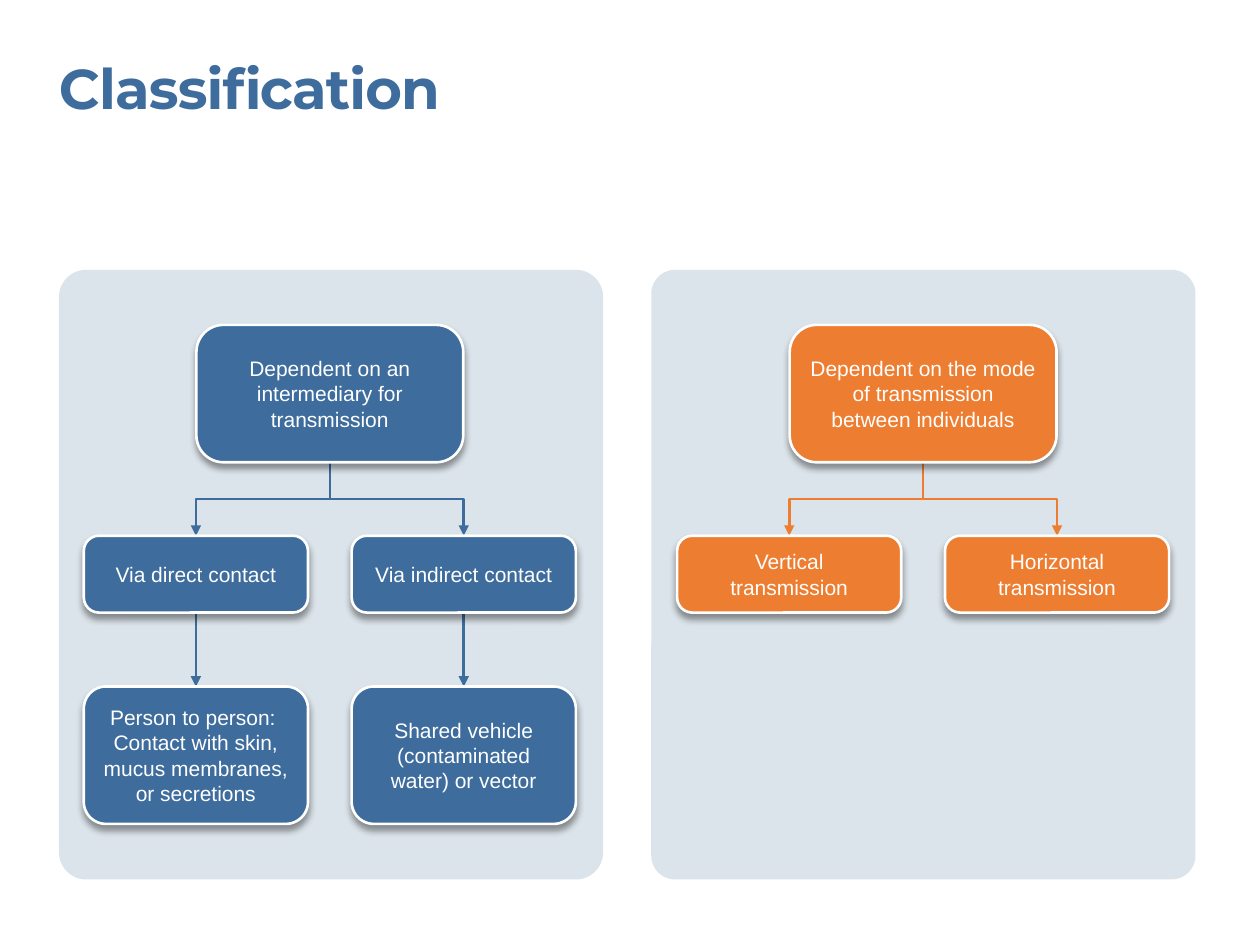
"""Build a slide that classifies transmission in two tree diagrams."""
from lxml import etree
from pptx import Presentation
from pptx import util as u
from pptx.dml.color import RGBColor
from pptx.enum import shapes, text
from pptx.oxml.ns import qn

BLUE = RGBColor(0x3D, 0x6C, 0x9D)
ORANGE = RGBColor(0xED, 0x7D, 0x30)
PALE = RGBColor(0xDB, 0xE4, 0xEA)
WHITE = RGBColor(0xFF, 0xFF, 0xFF)
ROUND = shapes.MSO_SHAPE.ROUNDED_RECTANGLE
KIND = shapes.MSO_CONNECTOR

deck = Presentation()
deck.slide_width, deck.slide_height = u.Cm(25.4), u.Cm(19.05)
slide = deck.slides.add_slide(deck.slide_layouts[6])
tree = slide.shapes


def add_box(mid, top, wide, high, adj, fill, lines):
    box = tree.add_shape(ROUND, u.Cm(mid - wide / 2), u.Cm(top), u.Cm(wide), u.Cm(high))
    box.adjustments[0] = adj
    box.fill.solid()
    box.fill.fore_color.rgb = fill
    box.line.color.rgb = WHITE
    box.line.width = u.Pt(1.5)
    box.shadow.inherit = False
    glow = etree.SubElement(
        box._element.spPr.find(qn("a:effectLst")), qn("a:outerShdw"),
        blurRad=str(u.Pt(4)), dist=str(u.Pt(3)), dir="5400000", rotWithShape="0")
    black = etree.SubElement(glow, qn("a:srgbClr"), val="000000")
    etree.SubElement(black, qn("a:alpha"), val="40000")
    frame = box.text_frame
    frame.word_wrap = True
    frame.vertical_anchor = text.MSO_ANCHOR.MIDDLE
    for i, words in enumerate(lines):
        para = frame.paragraphs[0] if i == 0 else frame.add_paragraph()
        para.alignment = text.PP_ALIGN.CENTER
        run = para.add_run()
        run.text = words
        run.font.name = "Arial"
        run.font.size = u.Pt(12)
        run.font.color.rgb = WHITE
    return box


def add_link(kind, start, end, color):
    link = tree.add_connector(kind, 0, 0, 0, 0)
    link.begin_connect(start, 2)
    link.end_connect(end, 0)
    link.line.color.rgb = color
    link.line.width = u.Pt(1.5)
    etree.SubElement(link.line._get_or_add_ln(), qn("a:tailEnd"), type="triangle")
    etree.SubElement(link._element.spPr, qn("a:effectLst"))
    tree._spTree.insert(5, link._element)
    return link


for left, adj in ((1.19, 0.05), (13.13, 0.044)):
    panel = tree.add_shape(ROUND, u.Cm(left), u.Cm(5.44), u.Cm(10.97), u.Cm(12.29))
    panel.adjustments[0] = adj
    panel.fill.solid()
    panel.fill.fore_color.rgb = PALE
    panel.line.fill.background()
    panel.shadow.inherit = False

title = tree.add_textbox(u.Cm(1.19), u.Cm(1.07), u.Cm(21.72), u.Cm(1.37))
frame = title.text_frame
frame.word_wrap = True
frame.margin_left = frame.margin_right = frame.margin_top = frame.margin_bottom = 0
run = frame.paragraphs[0].add_run()
run.text = "Classification"
run.font.name = "Montserrat"
run.font.size = u.Pt(32)
run.font.bold = True
run.font.color.rgb = BLUE
run.font._element.set("spc", "-50")

trees = [
    (6.65, BLUE, "Dependent on an intermediary for transmission", [
        ("Via direct contact", ["Person to person: ",
                                "Contact with skin, mucus membranes, or secretions"]),
        ("Via indirect contact", ["Shared vehicle (contaminated water) or vector"]),
    ]),
    (18.61, ORANGE, "Dependent on the mode of transmission between individuals", [
        ("Vertical transmission", []),
        ("Horizontal transmission", []),
    ]),
]
STEP, DROP = 2.7, 1.48
for mid, color, head, kids in trees:
    root = add_box(mid, 6.55, 5.38, 2.77, 0.197, color, [head])
    for side, (name, leaf) in zip((-1, 1), kids):
        x = mid + side * STEP
        kid = add_box(x, 10.8, 4.52, 1.55, 0.197, color, [name])
        bend = add_link(KIND.ELBOW, root, kid, color)
        bend.left = u.Cm((mid + x - DROP) / 2)
        bend.top = u.Cm(9.32 + (DROP - STEP) / 2)
        bend.width, bend.height = u.Cm(DROP), u.Cm(STEP)
        turn = bend._element.spPr.find(qn("a:xfrm"))
        turn.set("rot", "5400000" if side < 0 else "16200000")
        turn.set("flipH", "0" if side < 0 else "1")
        if leaf:
            last = add_box(x, 13.84, 4.52, 2.77, 0.161, color, leaf)
            add_link(KIND.STRAIGHT, kid, last, color)

deck.save("out.pptx")
